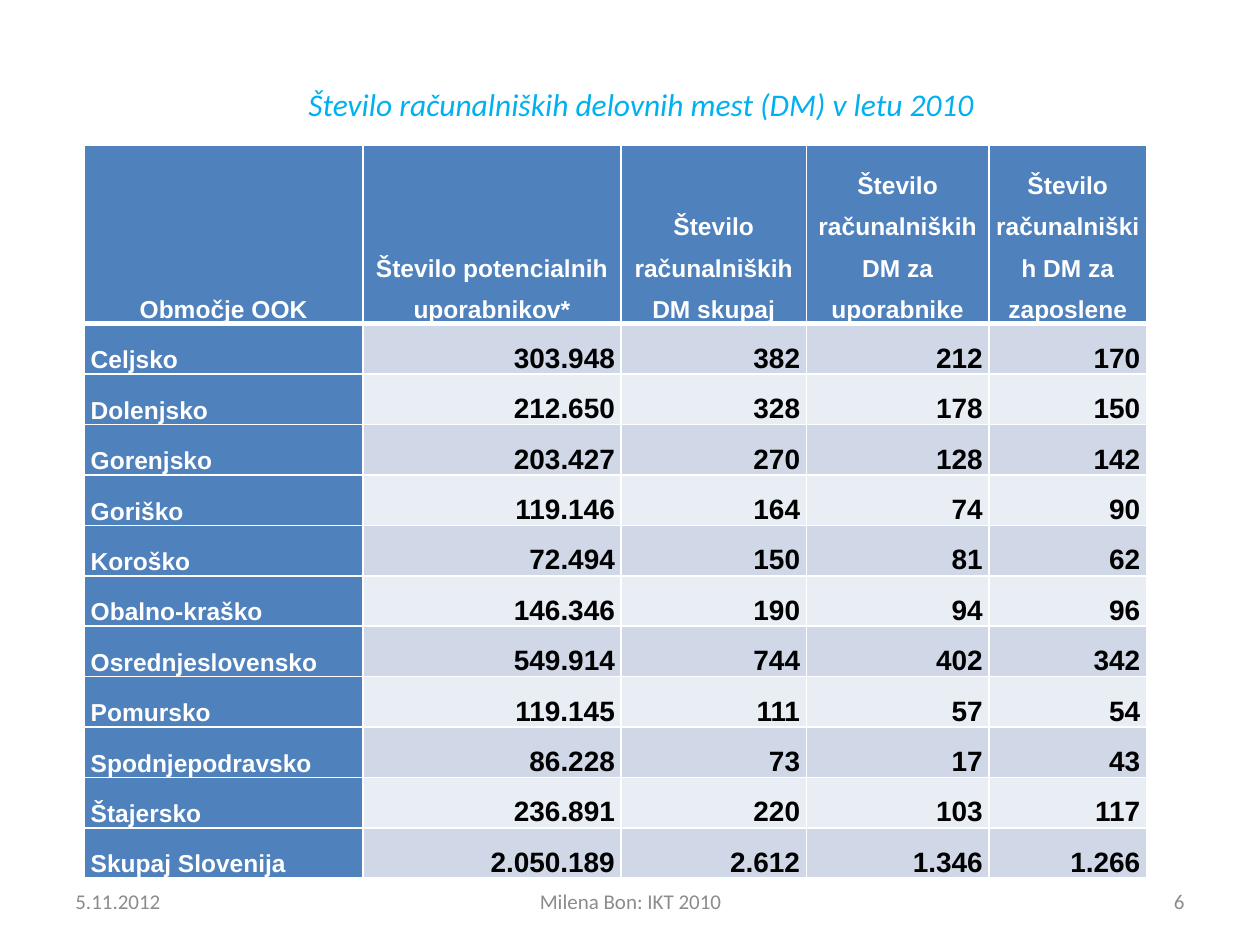
from lxml import etree
from pptx import Presentation
from pptx.dml.color import RGBColor
from pptx.enum import text
from pptx.oxml import ns
from pptx.util import Inches, Pt

COLORS = {
    "title": "00B0F0",
    "header": "4F81BD",
    "dark band": "D0D8E8",
    "light band": "E9EDF4",
    "white": "FFFFFF",
    "number": "000000",
    "footer": "8C8C8C",
}
LEFT, CENTER, RIGHT = text.PP_ALIGN.LEFT, text.PP_ALIGN.CENTER, text.PP_ALIGN.RIGHT

HEADERS = [
    "Območje OOK",
    "Število potencialnih uporabnikov*",
    "Število računalniških DM skupaj",
    "Število računalniških DM za uporabnike",
    "Število računalniških DM za zaposlene",
]
REGIONS = [
    ("Celjsko", "303.948", "382", "212", "170"),
    ("Dolenjsko", "212.650", "328", "178", "150"),
    ("Gorenjsko", "203.427", "270", "128", "142"),
    ("Goriško", "119.146", "164", "74", "90"),
    ("Koroško", "72.494", "150", "81", "62"),
    ("Obalno-kraško", "146.346", "190", "94", "96"),
    ("Osrednjeslovensko", "549.914", "744", "402", "342"),
    ("Pomursko", "119.145", "111", "57", "54"),
    ("Spodnjepodravsko", "86.228", "73", "17", "43"),
    ("Štajersko", "236.891", "220", "103", "117"),
    ("Skupaj Slovenija", "2.050.189", "2.612", "1.346", "1.266"),
]
COLUMN_WIDTHS = [2.21, 2.05, 1.47, 1.45, 1.25]
HEADER_HEIGHT, ROW_HEIGHT = 1.42, 0.4


class SlideBuilder:
    def __init__(self, slide):
        self.slide = slide

    def add_words(self, paragraph, words, size, color, font, align, bold=False, italic=False):
        paragraph.alignment = align
        run = paragraph.add_run()
        run.text = words
        run.font.name = font
        run.font.size = Pt(size)
        run.font.bold = bold
        run.font.italic = italic
        run.font.color.rgb = RGBColor.from_string(COLORS[color])

    def text_box(self, words, left, top, width, height, size, color, align, italic=False):
        shape = self.slide.shapes.add_textbox(
            Inches(left), Inches(top), Inches(width), Inches(height))
        frame = shape.text_frame
        frame.word_wrap = True
        frame.vertical_anchor = text.MSO_ANCHOR.MIDDLE
        self.add_words(frame.paragraphs[0], words, size, color, "Calibri", align, italic=italic)

    def borders(self, cell, top=1, bottom=1):
        """Draw white borders; the line elements must come before the cell's fill."""
        properties = cell._tc.get_or_add_tcPr()
        widths = {"lnL": 1, "lnR": 1, "lnT": top, "lnB": bottom}
        for index, (tag, width) in enumerate(widths.items()):
            line = etree.Element(ns.qn(f"a:{tag}"), w=str(Pt(width)))
            fill = etree.SubElement(line, ns.qn("a:solidFill"))
            etree.SubElement(fill, ns.qn("a:srgbClr"), val=COLORS["white"])
            properties.insert(index, line)

    def cell(self, cell, words, fill, size, color, align):
        cell.margin_left = cell.margin_right = Inches(0.05)
        cell.margin_top = cell.margin_bottom = 0
        cell.vertical_anchor = text.MSO_ANCHOR.BOTTOM
        cell.fill.solid()
        cell.fill.fore_color.rgb = RGBColor.from_string(COLORS[fill])
        paragraph = cell.text_frame.paragraphs[0]
        paragraph.line_spacing = 1.5
        self.add_words(paragraph, words, size, color, "Arial", align, bold=True)

    def table(self, left, top, headers, rows):
        heights = [HEADER_HEIGHT] + [ROW_HEIGHT] * len(rows)
        table = self.slide.shapes.add_table(
            len(heights), len(headers), Inches(left), Inches(top),
            Inches(sum(COLUMN_WIDTHS)), Inches(sum(heights))).table
        for column, width in zip(table.columns, COLUMN_WIDTHS):
            column.width = Inches(width)
        for row, height in zip(table.rows, heights):
            row.height = Inches(height)
        for row_index, values in enumerate([headers, *rows]):
            band = "dark band" if row_index % 2 else "light band"
            for column_index, words in enumerate(values):
                cell = table.cell(row_index, column_index)
                if row_index == 0:
                    self.cell(cell, words, "header", 14, "white", CENTER)
                elif column_index == 0:
                    self.cell(cell, words, "header", 14, "white", LEFT)
                else:
                    self.cell(cell, words, band, 16, "number", RIGHT)
                self.borders(cell, top=3 if row_index == 1 else 1,
                             bottom=3 if row_index == 0 else 1)


def main():
    presentation = Presentation()
    presentation.slide_width = Inches(10)
    presentation.slide_height = Inches(7.5)
    builder = SlideBuilder(presentation.slides.add_slide(presentation.slide_layouts[6]))

    builder.text_box("Število računalniških delovnih mest (DM) v letu 2010",
                     0.59, 0.36, 9, 0.93, 18, "title", CENTER, italic=True)
    builder.table(0.67, 1.15, HEADERS, REGIONS)
    for words, left, width, align in [
        ("5.11.2012", 0.5, 2.33, LEFT),
        ("Milena Bon: IKT 2010", 3.42, 3.17, CENTER),
        ("6", 7.17, 2.33, RIGHT),
    ]:
        builder.text_box(words, left, 6.95, width, 0.4, 12, "footer", align)

    presentation.save("out.pptx")


if __name__ == "__main__":
    main()
